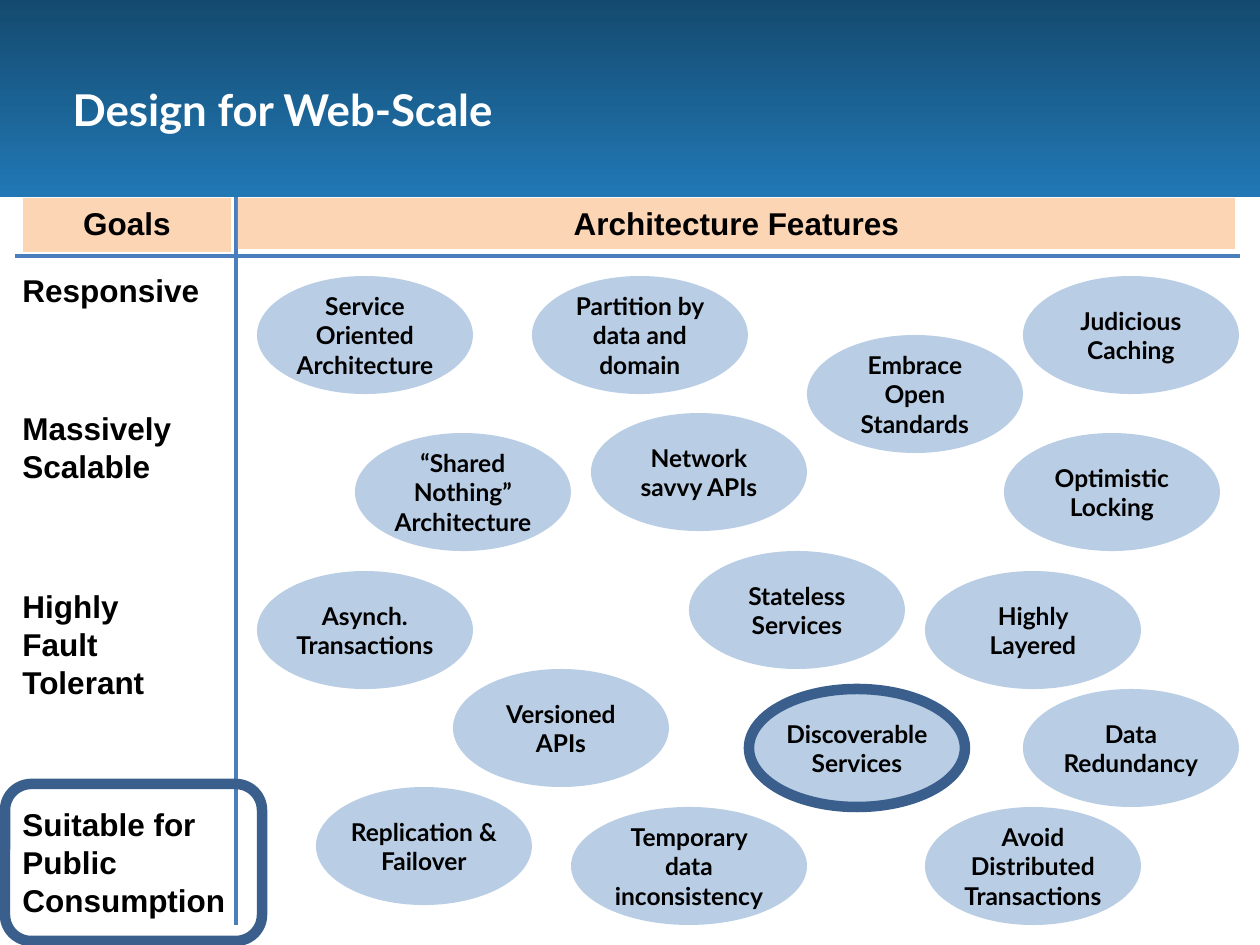
from dataclasses import dataclass

import lxml.etree
import pptx
import pptx.dml.color
import pptx.enum.dml
import pptx.enum.shapes
import pptx.enum.text
import pptx.oxml.ns
import pptx.util

SHAPE = pptx.enum.shapes.MSO_SHAPE
ALIGN = pptx.enum.text.PP_ALIGN
ANCHOR = pptx.enum.text.MSO_ANCHOR
EMU_PER_PX = 914400 / 126


@dataclass(frozen=True)
class Theme:
    band_top: str = "144A6F"
    band_bottom: str = "2178B5"
    header: str = "FCD5B5"
    bubble: str = "B9CDE5"
    rule: str = "4B7EBC"
    highlight: str = "3A5F8C"
    title_text: str = "FFFFFF"
    text: str = "000000"
    title_font: str = "Lato"
    label_font: str = "Arial"
    bubble_font: str = "Lato"
    title_size: int = 25
    label_size: int = 18
    bubble_size: int = 14
    rule_width: float = 2.25
    highlight_width: int = 6


@dataclass(frozen=True)
class Box:
    left: int
    top: int
    width: int
    height: int


@dataclass(frozen=True)
class Label:
    text: str
    box: Box


@dataclass(frozen=True)
class Bubble:
    text: str
    left: int
    top: int
    width: int = 216
    height: int = 118


THEME = Theme()

GOALS = [
    Label("Responsive", Box(10, 265, 204, 50)),
    Label("Massively Scalable", Box(10, 403, 192, 89)),
    Label("Highly Fault Tolerant", Box(10, 581, 197, 127)),
    Label("Suitable for Public Consumption", Box(10, 799, 268, 127)),
]
HEADERS = [
    Label("Goals", Box(23, 198, 208, 54)),
    Label("Architecture Features", Box(238, 198, 997, 51)),
]
RULES = [(15, 256, 1240, 256), (236, 197, 236, 925)]
DISCOVERABLE = Bubble("Discoverable Services", 749, 689)
FEATURES = [
    Bubble("Service Oriented Architecture", 257, 276),
    Bubble("“Shared Nothing” Architecture", 355, 433),
    Bubble("Judicious Caching", 1023, 276),
    Bubble("Stateless Services", 689, 551),
    Bubble("Replication & Failover", 316, 787),
    Bubble("Embrace Open Standards", 807, 335),
    Bubble("Highly Layered", 925, 571),
    DISCOVERABLE,
    Bubble("Asynch. Transactions", 257, 571),
    Bubble("Avoid Distributed Transactions", 925, 807),
    Bubble("Temporary data inconsistency", 571, 807, 236),
    Bubble("Partition by data and domain", 532, 276),
    Bubble("Optimistic Locking", 1004, 433),
    Bubble("Network savvy APIs", 591, 413),
    Bubble("Versioned APIs", 453, 669),
    Bubble("Data Redundancy", 1023, 689),
]


def px(length: int) -> int:
    return round(length * EMU_PER_PX)


def place(box: Box | Bubble) -> tuple[int, int, int, int]:
    return px(box.left), px(box.top), px(box.width), px(box.height)


def rgb(value: str) -> pptx.dml.color.RGBColor:
    return pptx.dml.color.RGBColor.from_string(value)


def style_font(font, name: str, size: int, color: str) -> None:
    font.name, font.size, font.bold = name, pptx.util.Pt(size), True
    font.color.rgb = rgb(color)


def add_filled(page, kind, box: Box | Bubble, color: str):
    shape = page.shapes.add_shape(kind, *place(box))
    shape.shadow.inherit = False
    shape.fill.solid()
    shape.fill.fore_color.rgb = rgb(color)
    shape.line.fill.background()
    return shape


def write_text(shape, text: str, font: str, size: int, align, anchor) -> None:
    frame = shape.text_frame
    frame.word_wrap = " " in text
    frame.vertical_anchor = anchor
    para = frame.paragraphs[0]
    para.text, para.alignment = text, align
    style_font(para.font, font, size, THEME.text)


def add_band(page) -> None:
    band = add_filled(page, SHAPE.RECTANGLE, Box(0, 0, 1260, 197), THEME.band_top)
    band.fill.gradient()
    band.fill.gradient_angle = 270
    colors = (THEME.band_top, THEME.band_bottom)
    for position, (stop, color) in enumerate(zip(band.fill.gradient_stops, colors)):
        stop.position = position
        stop.color.rgb = rgb(color)
    # The band lies behind the title
    page.shapes.title.element.addprevious(band.element)


def set_title(page, text: str) -> None:
    title = page.shapes.title
    title.left, title.top, title.width, title.height = place(Box(60, 20, 963, 177))
    title.text_frame.vertical_anchor = ANCHOR.MIDDLE
    para = title.text_frame.paragraphs[0]
    para.alignment = ALIGN.LEFT
    span = para.add_run()
    span.text = text
    style_font(span.font, THEME.title_font, THEME.title_size, THEME.title_text)
    # Text shadow
    qn = pptx.oxml.ns.qn
    effects = lxml.etree.Element(qn("a:effectLst"))
    shadow = lxml.etree.SubElement(effects, qn("a:outerShdw"), dist="38100", dir="2700000")
    lxml.etree.SubElement(shadow, qn("a:srgbClr"), val=THEME.text)
    span.font.fill._xPr.find(qn("a:solidFill")).addnext(effects)


def add_goal(page, goal: Label) -> None:
    box = page.shapes.add_textbox(*place(goal.box))
    write_text(box, goal.text, THEME.label_font, THEME.label_size, ALIGN.LEFT, ANCHOR.TOP)


def add_header(page, header: Label) -> None:
    shape = add_filled(page, SHAPE.RECTANGLE, header.box, THEME.header)
    write_text(shape, header.text, THEME.label_font, THEME.label_size, ALIGN.CENTER, ANCHOR.TOP)


def add_rule(page, ends: tuple[int, int, int, int]) -> None:
    rule = page.shapes.add_connector(
        pptx.enum.shapes.MSO_CONNECTOR.STRAIGHT, *(px(end) for end in ends))
    rule.line.color.rgb = rgb(THEME.rule)
    rule.line.width = pptx.util.Pt(THEME.rule_width)
    lxml.etree.SubElement(rule.element.spPr, pptx.oxml.ns.qn("a:effectLst"))


def add_bubble(page, bubble: Bubble) -> None:
    shape = add_filled(page, SHAPE.OVAL, bubble, THEME.bubble)
    shape.text_frame.margin_left = shape.text_frame.margin_right = 0
    write_text(shape, bubble.text, THEME.bubble_font, THEME.bubble_size,
               ALIGN.CENTER, ANCHOR.MIDDLE)


def add_highlight(page, kind, box: Box | Bubble) -> None:
    ring = page.shapes.add_shape(kind, *place(box))
    ring.shadow.inherit = False
    ring.fill.background()
    ring.line.color.rgb = rgb(THEME.highlight)
    ring.line.width = pptx.util.Pt(THEME.highlight_width)


def main() -> None:
    deck = pptx.Presentation()
    deck.slide_width, deck.slide_height = px(1260), px(945)
    page = deck.slides.add_slide(deck.slide_layouts.get_by_name("Title Only"))

    # Title band
    add_band(page)
    set_title(page, "Design for Web-Scale")

    # Goals column, rules and column headers
    for goal in GOALS:
        add_goal(page, goal)
    for ends in RULES:
        add_rule(page, ends)
    for header in HEADERS:
        add_header(page, header)

    # Architecture features
    for feature in FEATURES:
        add_bubble(page, feature)

    # Highlighted feature and goal
    add_highlight(page, SHAPE.OVAL, DISCOVERABLE)
    add_highlight(page, SHAPE.ROUNDED_RECTANGLE, Box(5, 784, 257, 157))

    deck.save("out.pptx")


if __name__ == "__main__":
    main()
